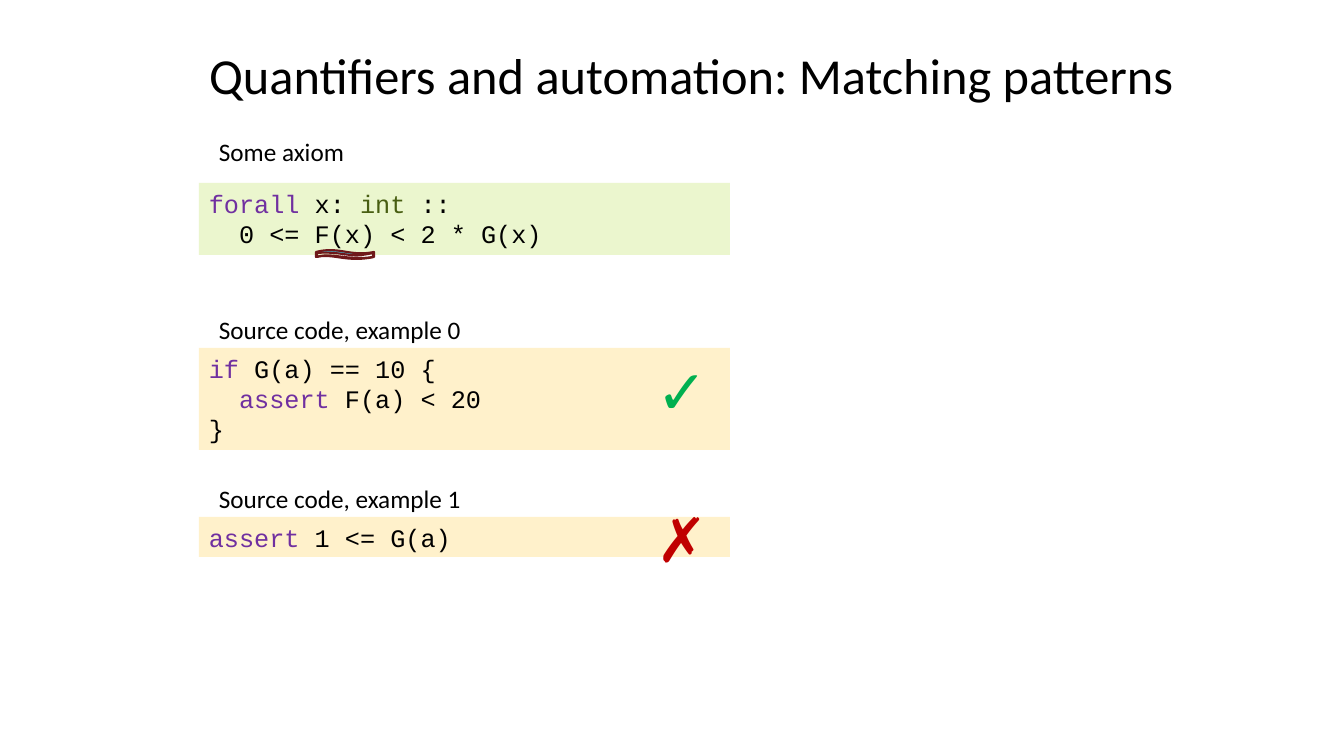
import pptx
import pptx.dml.color
import pptx.enum.shapes
import pptx.enum.text
import pptx.util

RGB = pptx.dml.color.RGBColor
BLACK = RGB(0x00, 0x00, 0x00)
KEYWORD = RGB(0x70, 0x30, 0xA0)
TYPE = RGB(0x48, 0x5E, 0x12)
AXIOM_FILL = RGB(0xEB, 0xF6, 0xCE)
SOURCE_FILL = RGB(0xFF, 0xF1, 0xCB)
VERIFIED = RGB(0x00, 0xB0, 0x50)
FAILED = RGB(0xC0, 0x00, 0x00)
INK_FILL = RGB(0x40, 0xBA, 0xD2)
INK_LINE = RGB(0x6F, 0x18, 0x1A)

EMU_PER_PX = 914400 / 100.8
UNITS_PER_PX = 100
CURVE_STEPS = 16
LEFT = 199
SNIPPET_WIDTH = 531

AXIOM = [
    [("forall", KEYWORD), (" x: ", BLACK), ("int", TYPE), (" ::", BLACK)],
    [("  0 <= F(x) < 2 * G(x)", BLACK)],
]
EXAMPLE_0 = [
    [("if", KEYWORD), (" G(a) == 10 {", BLACK)],
    [("  ", BLACK), ("assert", KEYWORD), (" F(a) < 20", BLACK)],
    [("}", BLACK)],
]
EXAMPLE_1 = [[("assert", KEYWORD), (" 1 <= G(a)", BLACK)]]


def px(length):
    return pptx.util.Emu(round(length * EMU_PER_PX))


def format_font(font, size, name, color=None):
    font.size = pptx.util.Pt(size)
    font.name = name
    if color is not None:
        font.color.rgb = color


def add_title(slide, left, top, width, height):
    title = slide.shapes.title
    title.left, title.top, title.width, title.height = map(px, (left, top, width, height))
    frame = title.text_frame
    frame.text = "Quantifiers and automation: Matching patterns"
    frame.vertical_anchor = pptx.enum.text.MSO_ANCHOR.TOP
    frame.auto_size = pptx.enum.text.MSO_AUTO_SIZE.NONE
    frame.paragraphs[0].alignment = pptx.enum.text.PP_ALIGN.LEFT
    format_font(frame.paragraphs[0].font, 36, "Calibri", BLACK)


def add_label(slide, left, top, width, height, text, size, color):
    frame = slide.shapes.add_textbox(*map(px, (left, top, width, height))).text_frame
    frame.word_wrap = True
    frame.text = text
    format_font(frame.paragraphs[0].font, size, "Calibri", color)


def add_snippet(slide, left, top, width, height, fill, code, caption, caption_rise):
    panel = slide.shapes.add_shape(
        pptx.enum.shapes.MSO_SHAPE.RECTANGLE, *map(px, (left, top, width, height)))
    panel.shadow.inherit = False
    panel.fill.solid()
    panel.fill.fore_color.rgb = fill
    panel.line.fill.background()
    frame = panel.text_frame
    frame.word_wrap = True
    frame.vertical_anchor = pptx.enum.text.MSO_ANCHOR.TOP
    for index, code_line in enumerate(code):
        paragraph = frame.paragraphs[0] if index == 0 else frame.add_paragraph()
        paragraph.alignment = pptx.enum.text.PP_ALIGN.LEFT
        format_font(paragraph.font, 18, "Courier New")
        for text, color in code_line:
            token = paragraph.add_run()
            token.text = text
            token.font.color.rgb = color
    add_label(slide, left + 10, top - caption_rise, 444, 40, caption, 18, BLACK)


def add_verdict(slide, left, top, mark, color):
    add_label(slide, left, top, 165, 85, mark, 44, color)


def curve(*controls):
    points = []
    for step in range(CURVE_STEPS + 1):
        t = step / CURVE_STEPS
        weights = ((1 - t) ** 3, 3 * t * (1 - t) ** 2, 3 * t * t * (1 - t), t ** 3)
        points.append(tuple(
            round(UNITS_PER_PX * sum(w * c[axis] for w, c in zip(weights, controls)))
            for axis in (0, 1)))
    return points


def add_underline(slide, left, top):
    outer = (curve((0, 0), (23, -6), (34, 5), (58, 0))
             + curve((58, 5), (31, 11), (18, 1), (0, 5)))
    inner = (curve((1, 5), (15, 0), (32, 9), (57, 5))
             + curve((57, 1), (33, 7), (28, -1), (1, 1)))
    builder = slide.shapes.build_freeform(*outer[0], scale=EMU_PER_PX / UNITS_PER_PX)
    builder.add_line_segments(outer[1:], close=True)
    builder.move_to(*inner[0])
    builder.add_line_segments(inner[1:], close=True)
    underline = builder.convert_to_shape(px(left), px(top))
    underline.shadow.inherit = False
    underline.fill.solid()
    underline.fill.fore_color.rgb = INK_FILL
    underline.line.color.rgb = INK_LINE
    underline.line.width = pptx.util.Pt(1.5)


def main():
    presentation = pptx.Presentation()
    presentation.slide_width = px(1344)
    presentation.slide_height = px(756)
    slide = presentation.slides.add_slide(presentation.slide_layouts[5])
    add_title(slide, LEFT, 39, 1126, 72)
    snippets = (
        (183, 72, AXIOM_FILL, AXIOM, "Some axiom", 52),
        (348, 102, SOURCE_FILL, EXAMPLE_0, "Source code, example 0", 39),
        (517, 40, SOURCE_FILL, EXAMPLE_1, "Source code, example 1", 39),
    )
    for top, *content in snippets:
        add_snippet(slide, LEFT, top, SNIPPET_WIDTH, *content)
    add_verdict(slide, 647, 348, "✓", VERIFIED)
    add_verdict(slide, 647, 496, "✗", FAILED)
    add_underline(slide, 316, 252)
    presentation.save("out.pptx")


if __name__ == "__main__":
    main()
